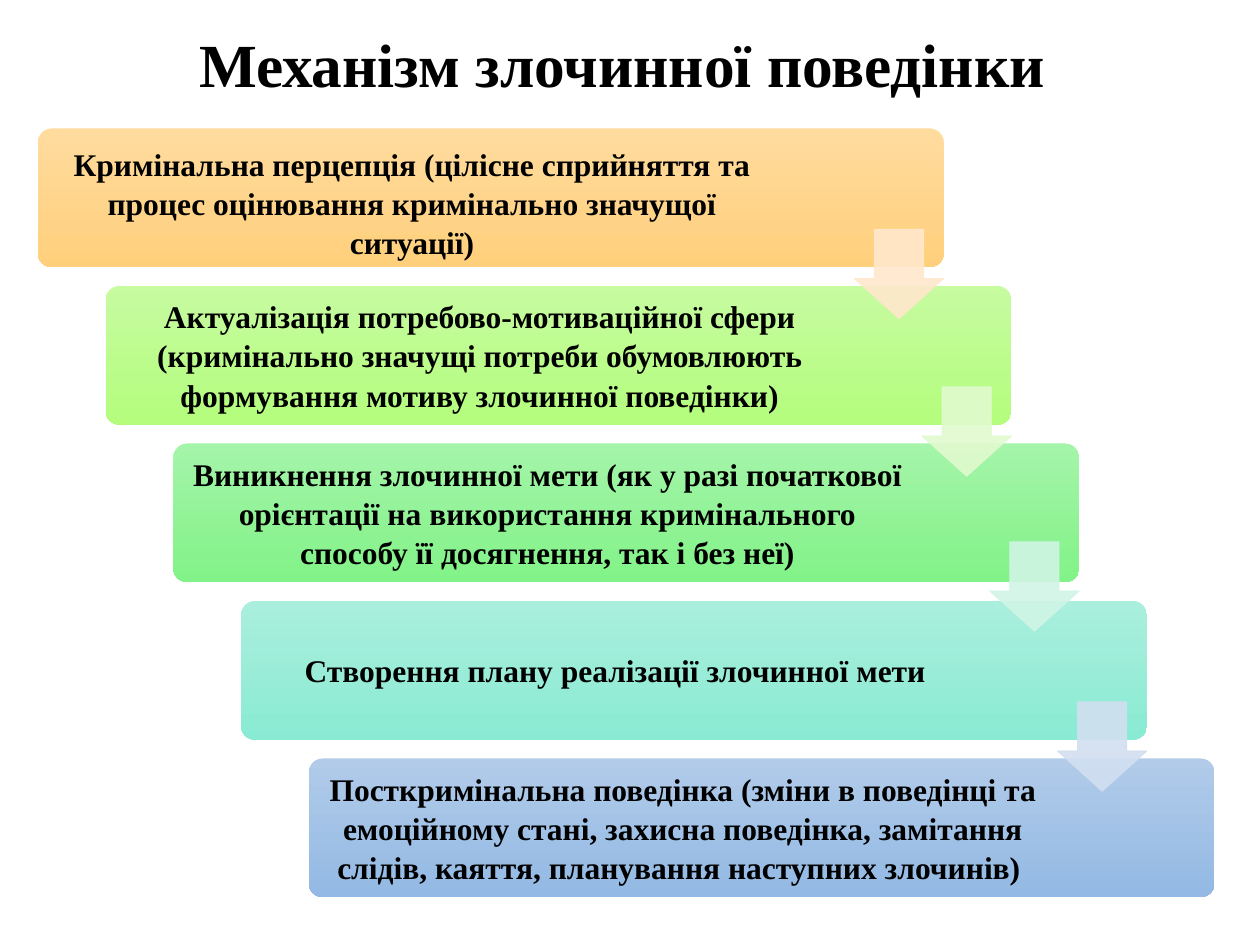
from pptx import Presentation
from pptx.dml.color import RGBColor
from pptx.enum.shapes import MSO_SHAPE as Shape
from pptx.enum.text import MSO_ANCHOR as Anchor, PP_ALIGN as Align
from pptx.oxml.ns import qn
from pptx.util import Inches, Pt
from lxml import etree


def color(value):
    return RGBColor.from_string(value)


def add_text(page, text, area, size, frame_format, line_spacing):
    box = page.shapes.add_textbox(*[Inches(length) for length in area])
    frame = box.text_frame
    for name, value in frame_format.items():
        setattr(frame, name, value)
    para = frame.paragraphs[0]
    para.alignment = Align.CENTER
    para.line_spacing = line_spacing
    span = para.add_run()
    span.text = text
    font_format = {"name": "Times New Roman", "size": Pt(size), "bold": True}
    for name, value in font_format.items():
        setattr(span.font, name, value)
    span.font.color.rgb = color("000000")


deck = Presentation()
deck.slide_width, deck.slide_height = Inches(10), Inches(7.5)
page = deck.slides.add_slide(deck.slide_layouts[6])

# Title
add_text(page, "Механізм злочинної поведінки ", (0.69, 0.19, 8.62, 0.83), 35,
         {"word_wrap": True}, 0.97)

# Stages: text, gradient top, gradient bottom, top inset
stages = [
    ("Кримінальна перцепція (цілісне сприйняття та процес оцінювання "
     "кримінально значущої ситуації)", "FFDB9E", "FFD07C", 0.15),
    ("Актуалізація потребово-мотиваційної сфери (кримінально значущі потреби "
     "обумовлюють формування мотиву злочинної поведінки)", "C6FBA0", "B4FD7D", 0.07),
    ("Виникнення злочинної мети (як у разі початкової орієнтації на використання "
     "кримінального способу її досягнення, так і без неї)", "A4F4A9", "82F388", 0.07),
    ("Створення плану реалізації злочинної мети", "AAEEDD", "89EBD3", 0.07),
    ("Посткримінальна поведінка (зміни в поведінці та емоційному стані, захисна "
     "поведінка, замітання слідів, каяття, планування наступних злочинів) ",
     "B1CBE9", "93B9E4", 0.07),
]
LEFT, TOP, STEP_X, STEP_Y = 0.3, 1.02, 0.5375, 1.25

# Staircase of rounded bars with their text
for index, (text, top_color, bottom_color, top_inset) in enumerate(stages):
    left, top = LEFT + index * STEP_X, TOP + index * STEP_Y
    bar = page.shapes.add_shape(Shape.ROUNDED_RECTANGLE, Inches(left), Inches(top),
                                Inches(7.19), Inches(1.1))
    bar.adjustments[0] = 0.1
    bar.shadow.inherit = False
    bar.line.fill.background()
    bar.fill.gradient()
    bar.fill.gradient_angle = 270
    for stop, value in zip(bar.fill.gradient_stops, (top_color, bottom_color)):
        stop.color.rgb = color(value)
    inset = Inches(0.07)
    add_text(page, text, (left + 0.03, top + 0.03, 5.88, 1.03), 18,
             {"word_wrap": True, "vertical_anchor": Anchor.MIDDLE,
              "margin_left": inset, "margin_right": inset,
              "margin_top": Inches(top_inset), "margin_bottom": inset}, 1.04)

# Translucent arrows between neighbouring bars
arrows = [("FFE8CC", 1.82), ("E1FACE", 3.07), ("D0F5E5", 4.3), ("D2DFF0", 5.57)]
for index, (value, top) in enumerate(arrows):
    arrow = page.shapes.add_shape(Shape.DOWN_ARROW, Inches(6.78 + index * STEP_X),
                                  Inches(top), Inches(0.71), Inches(0.71))
    arrow.adjustments[0], arrow.adjustments[1] = 0.55, 0.45
    arrow.shadow.inherit = False
    arrow.line.width = Pt(0.5)
    for fill in (arrow.fill, arrow.line.fill):
        fill.solid()
        fill.fore_color.rgb = color(value)
    for node in arrow.element.spPr.iter(qn("a:srgbClr")):
        etree.SubElement(node, qn("a:alpha")).set("val", "90000")

deck.save("out.pptx")
